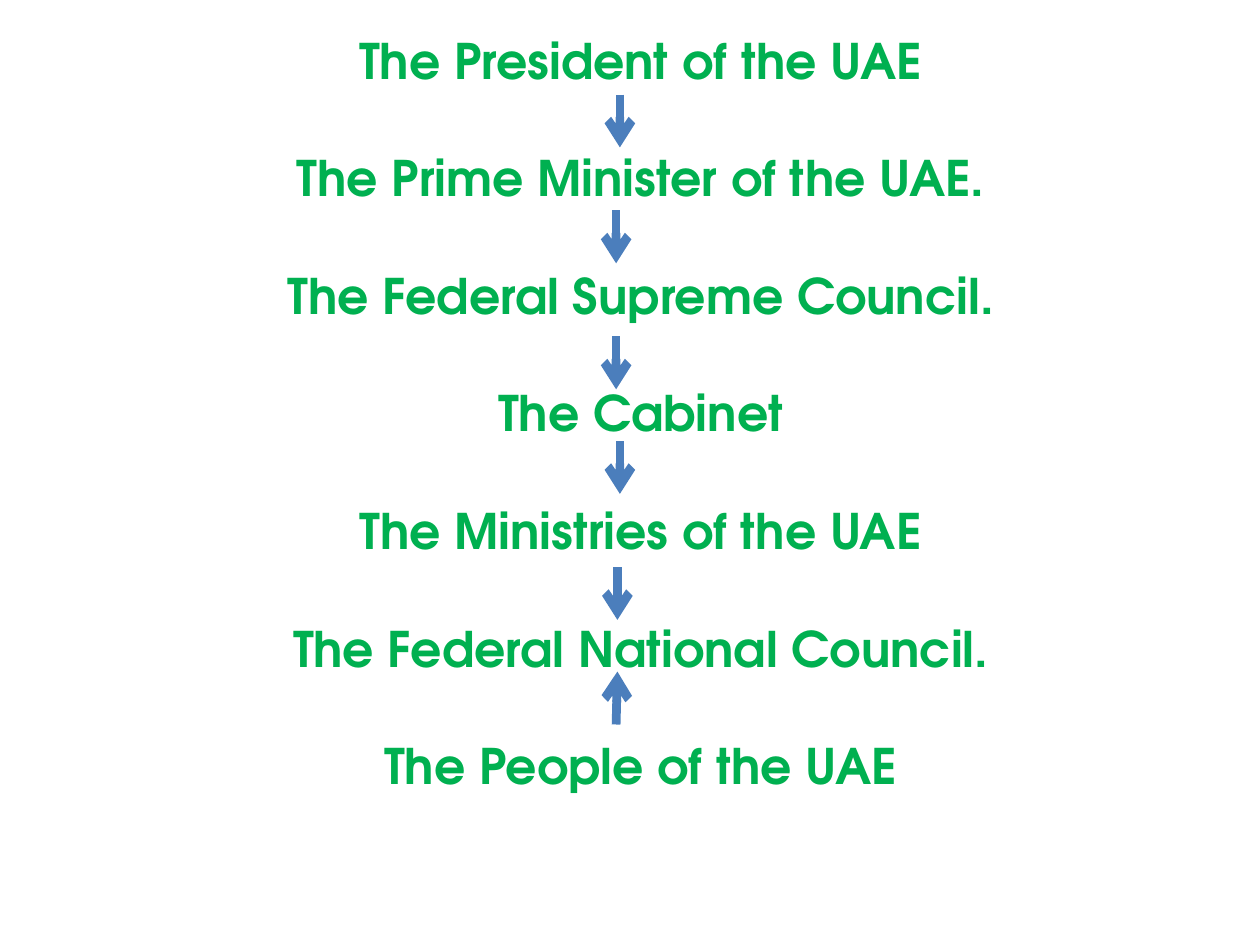
from lxml import etree
from pptx import Presentation
from pptx.dml.color import RGBColor
from pptx.enum.shapes import MSO_CONNECTOR as CONN
from pptx.enum.text import MSO_AUTO_SIZE as AUTO, PP_ALIGN as ALIGN
from pptx.oxml.ns import qn
from pptx.util import Inches, Pt

GREEN = RGBColor(0x00, 0xB0, 0x50)
BLUE = RGBColor(0x4B, 0x7E, 0xBC)

LEVELS = [
    "The President of the UAE",
    "The Prime Minister of the UAE.",
    "The Federal Supreme Council.",
    "The Cabinet",
    "The Ministries of the UAE",
    "The Federal National Council.",
    "The People of the UAE",
]
ARROW_LENGTH = 0.42
DOWN_ARROWS = [(4.92, 0.75), (4.89, 1.67), (4.89, 2.67), (4.92, 3.5), (4.9, 4.5)]


class Chart:
    font = "TeX Gyre Adventor"
    size = Pt(28)
    gap = Pt(33.6)
    line_width = Pt(5)

    def __init__(self, slide):
        self.s = slide

    def levels(self, lines, left, top, width, height):
        tb = self.s.shapes.add_textbox(
            Inches(left), Inches(top), Inches(width), Inches(height))
        tf = tb.text_frame
        tf.word_wrap = True
        tf.auto_size = AUTO.SHAPE_TO_FIT_TEXT
        tf.text = "\n".join(lines)
        for i, p in enumerate(tf.paragraphs):
            p.alignment = ALIGN.CENTER
            p.space_before = self.gap if i else Pt(0)
            for r in p.runs:
                r.font.name = self.font
                r.font.size = self.size
                r.font.bold = True
                r.font.color.rgb = GREEN

    def arrow(self, x1, y1, x2, y2):
        c = self.s.shapes.add_connector(
            CONN.STRAIGHT, Inches(x1), Inches(y1), Inches(x2), Inches(y2))
        c.line.color.rgb = BLUE
        c.line.width = self.line_width
        sp_pr = c.element.spPr
        etree.SubElement(sp_pr.find(qn("a:ln")), qn("a:tailEnd"), type="arrow")
        etree.SubElement(sp_pr, qn("a:effectLst"))


def main():
    prs = Presentation()
    prs.slide_width, prs.slide_height = Inches(10), Inches(7.5)
    chart = Chart(prs.slides.add_slide(prs.slide_layouts[6]))
    chart.levels(LEVELS, 2.17, 0.19, 5.83, 6.23)
    for x, y in DOWN_ARROWS:
        chart.arrow(x, y, x, y + ARROW_LENGTH)
    chart.arrow(4.89, 5.75, 4.9, 5.75 - ARROW_LENGTH)
    prs.save("out.pptx")


if __name__ == "__main__":
    main()
